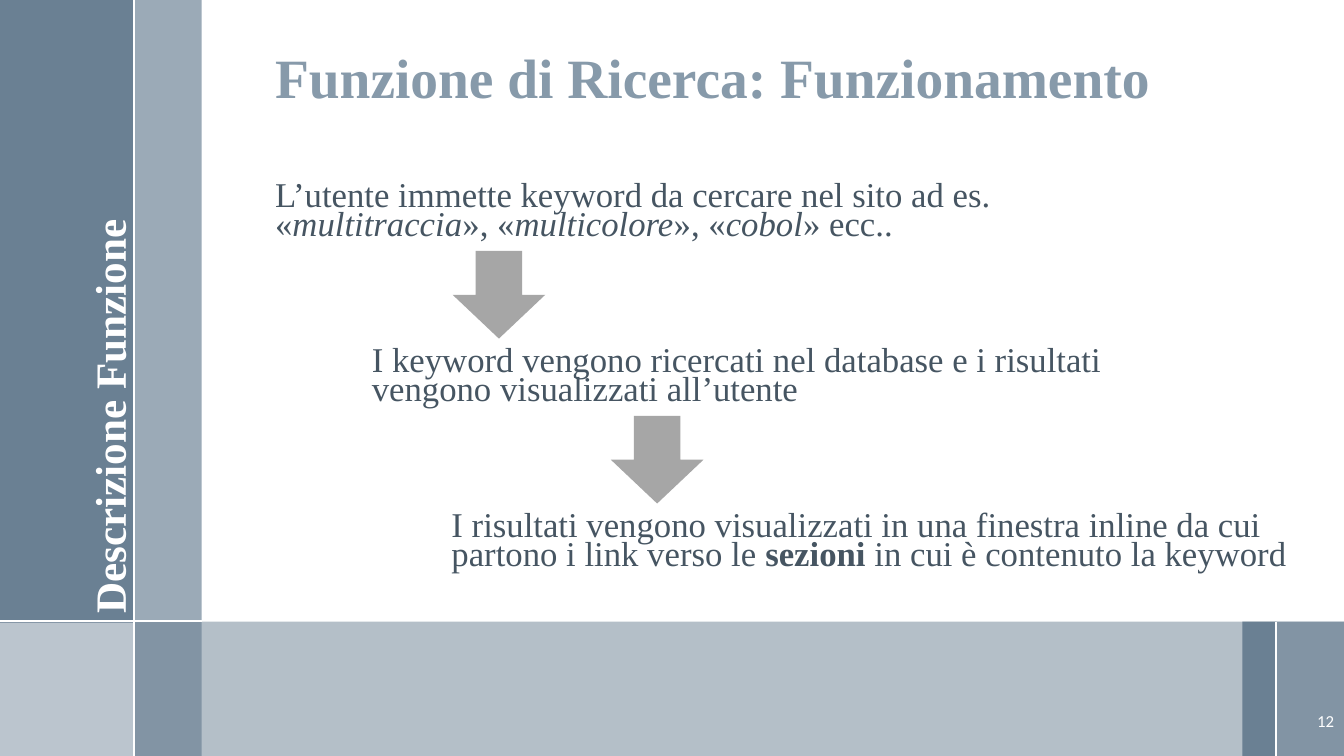
from lxml import etree
from pptx import Presentation
from pptx.dml.color import RGBColor
from pptx.enum.shapes import MSO_CONNECTOR as CONN, MSO_SHAPE as SHAPE
from pptx.enum.text import MSO_ANCHOR as ANCHOR, PP_ALIGN as ALIGN
from pptx.oxml.ns import qn
from pptx.util import Pt

W, H = 960, 540
SERIF, SANS = "Times New Roman", "Calibri"
WHITE, SLATE, MIST, PALE = "FFFFFF", "6A8093", "9BAAB7", "D7DDE3"
TITLE_COLOR, BODY_COLOR, ARROW_COLOR = "879AAA", "465562", "A6A6A6"

TITLE = "Funzione di Ricerca: Funzionamento"
SECTION = "Descrizione Funzione"
PAGE = "12"
STEPS = [
    (189.4, [[("L’utente immette keyword da cercare nel sito ad es. «", ""),
              ("multitraccia", "i"), ("», «", ""), ("multicolore", "i"),
              ("», «", ""), ("cobol", "i"), ("» ecc..", "")]]),
    (258.5, [[("I keyword vengono ricercati nel database e i risultati", "")],
             [("vengono visualizzati all’utente", "")]]),
    (315.4, [[("I risultati vengono visualizzati in una finestra inline da cui "
               "partono i link verso le ", ""),
              ("sezioni", "b"), (" in cui è contenuto la keyword", "")]]),
]
ARROW_LEFTS = [323.3, 436.3]

BAND = 96
BAND_TOP = H - BAND
PAGE_LEFT = W - BAND / 2 - 0.5
STEP_TOP, STEP_GAP = 128.2, 117.8
STEP_W, STEP_H = 628.6, 51.1
ARROW_W, ARROW_H = 66.2, 62.6

BLOCKS = [
    (PAGE_LEFT, BAND_TOP, W - PAGE_LEFT, BAND, MIST, 100),
    (PAGE_LEFT - 24, BAND_TOP, 24, BAND, SLATE, 100),
    (BAND, 0, BAND / 2, H, MIST, 100),
    (0, 0, BAND, H, SLATE, 100),
    (0, BAND_TOP, W, BAND, SLATE, 50),
]
CORNER = (0, BAND_TOP + 0.8, BAND, BAND - 0.8, PALE, 75)
PAGE_RULE = (PAGE_LEFT, BAND_TOP, PAGE_LEFT, H)
SIDE_RULES = [(BAND, 0, BAND, H), (0, BAND_TOP - 0.5, BAND * 1.5, BAND_TOP - 0.5)]


def rgb(color):
    return RGBColor.from_string(color)


def add_block(s, kind, x, y, w, h, color, alpha=100):
    sp = s.shapes.add_shape(kind, Pt(x), Pt(y), Pt(w), Pt(h))
    sp.shadow.inherit = False
    sp.fill.solid()
    sp.fill.fore_color.rgb = rgb(color)
    sp.line.fill.background()
    if alpha < 100:
        clr = sp.fill._xPr.find(qn("a:solidFill"))[0]
        etree.SubElement(clr, qn("a:alpha"), val=str(alpha * 1000))


def add_rule(s, x1, y1, x2, y2):
    line = s.shapes.add_connector(CONN.STRAIGHT, Pt(x1), Pt(y1), Pt(x2), Pt(y2))
    line.line.color.rgb = rgb(WHITE)
    line.line.width = Pt(1.5)
    etree.SubElement(line._element.spPr, qn("a:effectLst"))


def add_text(s, x, y, w, h, paras, size, color, font=SERIF, spacing=None,
             anchor=ANCHOR.TOP, align=ALIGN.LEFT, rotation=0):
    sp = s.shapes.add_textbox(Pt(x), Pt(y), Pt(w), Pt(h))
    sp.rotation = rotation
    tf = sp.text_frame
    tf.word_wrap = True
    tf.vertical_anchor = anchor
    for i, runs in enumerate(paras):
        p = tf.add_paragraph() if i else tf.paragraphs[0]
        p.alignment = align
        p.line_spacing = spacing
        for text, style in runs:
            r = p.add_run()
            r.text = text
            r.font.name = font
            r.font.size = Pt(size)
            r.font.color.rgb = rgb(color)
            r.font.bold = style == "b"
            r.font.italic = style == "i"


def main():
    prs = Presentation()
    prs.slide_width, prs.slide_height = Pt(W), Pt(H)
    s = prs.slides.add_slide(prs.slide_layouts[6])

    for block in BLOCKS:
        add_block(s, SHAPE.RECTANGLE, *block)
    add_rule(s, *PAGE_RULE)
    add_block(s, SHAPE.RECTANGLE, *CORNER)
    for rule in SIDE_RULES:
        add_rule(s, *rule)

    add_text(s, STEPS[0][0], 19.4, 656, 76.3, [[(TITLE, "b")]], 39.6, TITLE_COLOR,
             spacing=0.9, anchor=ANCHOR.MIDDLE)
    for i, (x, paras) in enumerate(STEPS):
        add_text(s, x, STEP_TOP + i * STEP_GAP, STEP_W, STEP_H, paras, 24.8,
                 BODY_COLOR, spacing=0.7)
    for i, x in enumerate(ARROW_LEFTS):
        add_block(s, SHAPE.DOWN_ARROW, x, STEP_TOP + STEP_H + i * STEP_GAP,
                  ARROW_W, ARROW_H, ARROW_COLOR)
    add_text(s, -85, 262, 306, 61.2, [[(SECTION, "b")]], 30.8, WHITE,
             spacing=0.7, anchor=ANCHOR.BOTTOM, rotation=270)
    add_text(s, PAGE_LEFT, 500.4, W - PAGE_LEFT, 28.8, [[(PAGE, "")]], 12, WHITE,
             font=SANS, anchor=ANCHOR.MIDDLE, align=ALIGN.RIGHT)
    prs.save("out.pptx")


if __name__ == "__main__":
    main()
